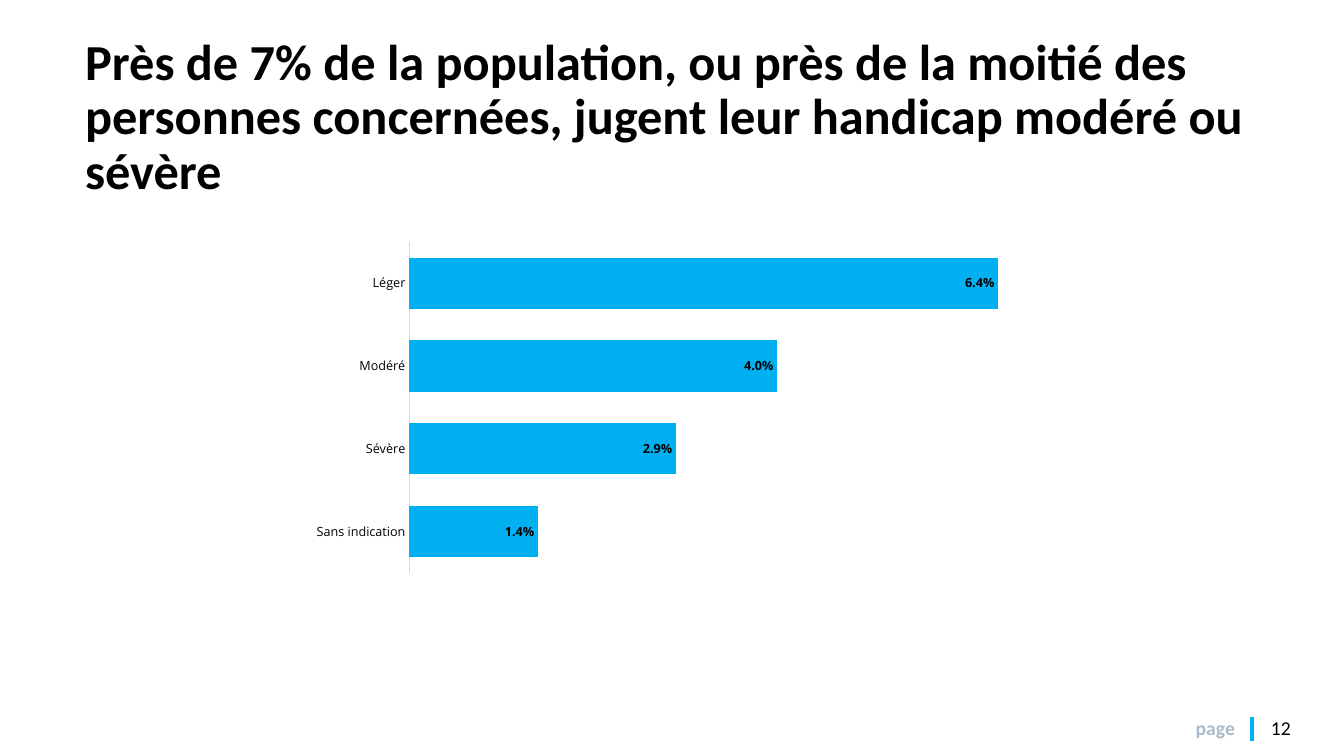
from lxml import etree
from pptx import Presentation
from pptx import util as u
from pptx.chart.data import CategoryChartData
from pptx.dml.color import RGBColor
from pptx.enum import chart as ch, shapes, text
from pptx.oxml import ns

PX = 914400 / 100.8
COLORS = {"text": "000000", "accent": "00B0F0", "muted": "ABBAC9", "axis": "D9D9D9"}
SEVERITY = [("Sans indication", 1.4), ("Sévère", 2.9), ("Modéré", 4.0), ("Léger", 6.4)]


def px(n):
    return u.Emu(round(n * PX))


def rgb(name):
    return RGBColor.from_string(COLORS[name])


def style_font(font, name, size, color, bold=False):
    font.name, font.size, font.bold = name, u.Pt(size), bold
    font.color.rgb = rgb(color)


def add_text(s, box, words, size, color="text", bold=False,
             align=text.PP_ALIGN.LEFT, anchor=text.MSO_ANCHOR.TOP, spacing=1.0):
    tf = s.shapes.add_textbox(*map(px, box)).text_frame
    tf.word_wrap = True
    tf.vertical_anchor = anchor
    tf.margin_left = tf.margin_right = tf.margin_top = tf.margin_bottom = 0
    p = tf.paragraphs[0]
    p.alignment, p.line_spacing = align, spacing
    r = p.add_run()
    r.text = words
    style_font(r.font, "Calibri", size, color, bold)


def add_line(s, x1, y1, x2, y2):
    ln = s.shapes.add_connector(shapes.MSO_CONNECTOR.STRAIGHT, *map(px, (x1, y1, x2, y2)))
    ln.line.color.rgb = rgb("accent")
    ln.line.width = u.Pt(2.25)
    etree.SubElement(ln._element.spPr, ns.qn("a:effectLst"))


def set_plot_layout(chart, x, y, w, h):
    """Place the inner plot area, in fractions of the chart."""
    area = chart._chartSpace.chart.plotArea
    for old in area.findall(ns.qn("c:layout")):
        area.remove(old)
    layout = etree.Element(ns.qn("c:layout"))
    area.insert(0, layout)
    manual = etree.SubElement(layout, ns.qn("c:manualLayout"))
    for tag, val in (("layoutTarget", "inner"), ("xMode", "edge"), ("yMode", "edge"),
                     ("x", x), ("y", y), ("w", w), ("h", h)):
        etree.SubElement(manual, ns.qn("c:" + tag)).set("val", str(val))


def add_bar_chart(s, box, rows):
    data = CategoryChartData(number_format="0.0")
    data.categories = [name for name, _ in rows]
    data.add_series("Series 1", [val for _, val in rows])
    chart = s.shapes.add_chart(ch.XL_CHART_TYPE.BAR_CLUSTERED, *map(px, box), data).chart
    chart.has_legend = chart.has_title = False
    style_font(chart.font, "Open Sans", 7, "text")

    cat = chart.category_axis
    cat.major_tick_mark = cat.minor_tick_mark = ch.XL_TICK_MARK.NONE
    cat.format.line.color.rgb = rgb("axis")
    cat.format.line.width = u.Pt(0.75)
    style_font(cat.tick_labels.font, "Open Sans", 9, "text")
    val = chart.value_axis
    val.minimum_scale, val.maximum_scale = 0, 7
    val.has_major_gridlines = val.visible = False

    plot = chart.plots[0]
    plot.gap_width, plot.overlap, plot.vary_by_categories = 62, -8, False
    fill = plot.series[0].format.fill
    fill.solid()
    fill.fore_color.rgb = rgb("accent")
    labels = plot.series[0].data_labels
    labels.show_value = True
    labels.position = ch.XL_LABEL_POSITION.INSIDE_END
    labels.number_format, labels.number_format_is_linked = r"0.0\%", False
    style_font(labels.font, "Open Sans", 9, "text", True)
    set_plot_layout(chart, 0.14, 0.02, 0.84, 0.96)


def main():
    prs = Presentation()
    prs.slide_width, prs.slide_height = px(1344), px(756)
    s = prs.slides.add_slide(prs.slide_layouts[6])
    add_text(s, (1150, 716, 85, 24), "page", 14, "muted", True, text.PP_ALIGN.RIGHT)
    add_line(s, 1252, 717, 1252, 741)
    add_text(s, (1271, 716, 50, 24), "12", 14)
    add_text(s, (85, 40, 1204, 157),
             "Près de 7% de la population, ou près de la moitié des personnes concernées, "
             "jugent leur handicap modéré ou sévère",
             36, bold=True, anchor=text.MSO_ANCHOR.MIDDLE, spacing=0.9)
    add_bar_chart(s, (302, 235, 767, 345), SEVERITY)
    prs.save("out.pptx")


if __name__ == "__main__":
    main()
